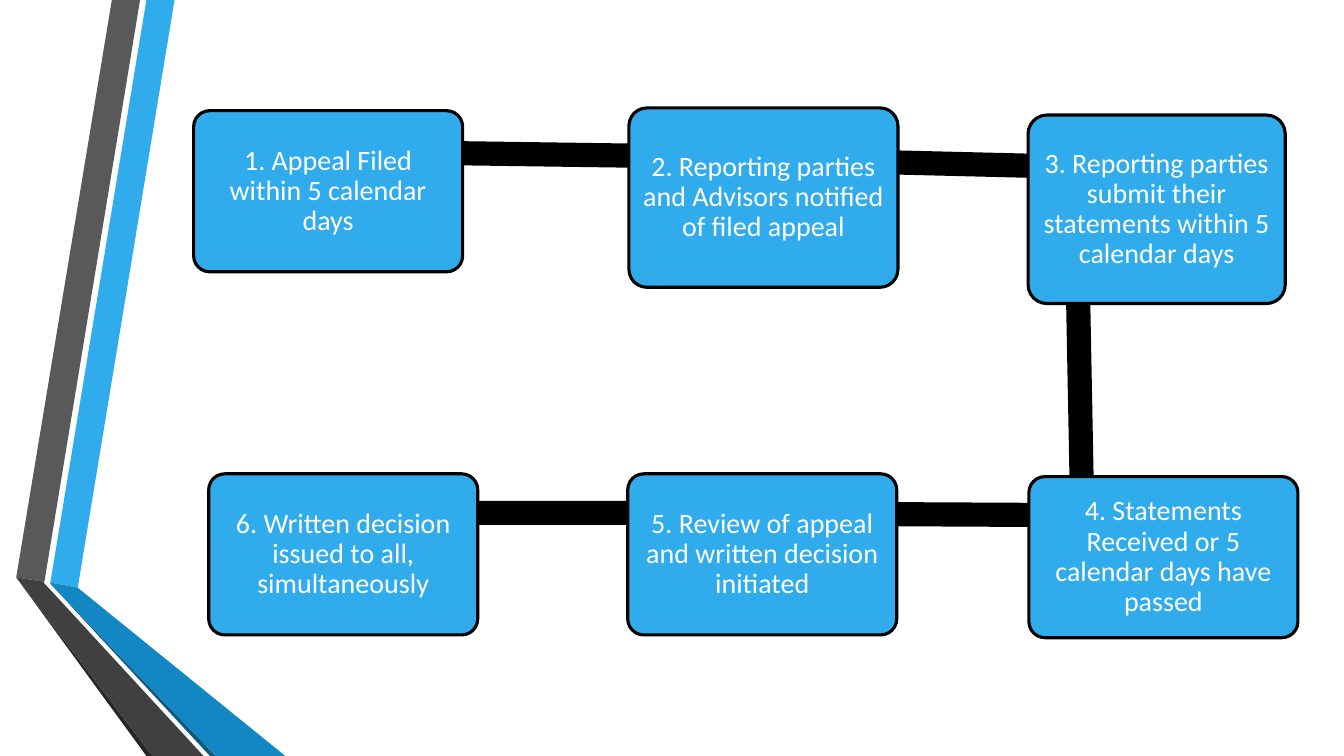
from pptx import Presentation
from pptx.dml.color import RGBColor
from pptx.enum.shapes import MSO_SHAPE
from pptx.enum.text import MSO_ANCHOR, PP_ALIGN
from pptx.util import Cm, Pt

BLACK = RGBColor(0x00, 0x00, 0x00)
WHITE = RGBColor(0xFF, 0xFF, 0xFF)
BLUE = RGBColor(0x30, 0xAC, 0xEC)
DEEP_BLUE = RGBColor(0x12, 0x87, 0xC3)
DARK_BLUE = RGBColor(0x0C, 0x5A, 0x82)
GREY = RGBColor(0x59, 0x59, 0x59)
DARK_GREY = RGBColor(0x40, 0x40, 0x40)
CHARCOAL = RGBColor(0x26, 0x26, 0x26)

RIBBON_FACES = [
    (BLUE, [(0.86, 14.68), (1.55, 14.81), (3.99, 0), (3.28, 0)]),
    (GREY, [(3.12, 0), (2.41, 0), (0, 14.55), (0.71, 14.66)]),
    (CHARCOAL, [(0, 14.55), (3.28, 19.05), (3.43, 19.05)]),
    (DARK_BLUE, [(0.86, 14.71), (4.88, 19.05), (5.03, 19.05)]),
    (DEEP_BLUE, [(0.86, 14.71), (5.03, 19.05), (6.78, 19.05),
                 (1.55, 14.81), (0.86, 14.68)]),
    (DARK_GREY, [(4.72, 19.05), (0.81, 14.81), (0.69, 14.68), (0.71, 14.66),
                 (0, 14.55), (3.43, 19.05)]),
]

BAR_HEIGHT = 0.61
BARS = [
    (1.37, 0.84, 10.97, 0.8),
    (12.32, 1.06, 9.91, 1.4),
    (17.93, 5.59, 8.76, 88.9),
    (12.32, 9.93, 10.11, 0.3),
    (1.75, 9.9, 10.57, 0),
]

STEP_WIDTH, STEP_HEIGHT = 6.78, 4.06
STEPS = [
    (0, 0.07, STEP_WIDTH, STEP_HEIGHT, "1. Appeal Filed within 5 calendar days"),
    (10.97, 0, STEP_WIDTH, 4.52,
     "2. Reporting parties and Advisors notified of filed appeal"),
    (21.03, 0.18, 6.48, 4.75,
     "3. Reporting parties submit their statements within 5 calendar days"),
    (21.05, 9.29, STEP_WIDTH, STEP_HEIGHT,
     "4. Statements Received or 5 calendar days have passed"),
    (10.94, 9.22, STEP_WIDTH, STEP_HEIGHT,
     "5. Review of appeal and written decision initiated"),
    (0.38, 9.22, STEP_WIDTH, STEP_HEIGHT,
     "6. Written decision issued to all, simultaneously"),
]


def paint(shape, color):
    shape.shadow.inherit = False
    shape.fill.solid()
    shape.fill.fore_color.rgb = color
    shape.line.fill.background()


def add_ribbons(slide, left, top):
    for color, corners in RIBBON_FACES:
        points = [(Cm(x), Cm(y)) for x, y in corners]
        builder = slide.shapes.build_freeform(*points[0])
        builder.add_line_segments(points[1:], close=True)
        paint(builder.convert_to_shape(Cm(left), Cm(top)), color)


def add_bar(slide, left, top, width, angle):
    bar = slide.shapes.add_shape(
        MSO_SHAPE.RECTANGLE, Cm(left), Cm(top), Cm(width), Cm(BAR_HEIGHT))
    bar.rotation = angle
    paint(bar, BLACK)


def add_step(slide, left, top, width, height, text):
    step = slide.shapes.add_shape(
        MSO_SHAPE.ROUNDED_RECTANGLE, Cm(left), Cm(top), Cm(width), Cm(height))
    step.adjustments[0] = 0.1
    paint(step, BLUE)
    step.line.color.rgb = BLACK
    step.line.width = Pt(2.25)
    frame = step.text_frame
    frame.word_wrap = True
    frame.vertical_anchor = MSO_ANCHOR.MIDDLE
    frame.margin_left = frame.margin_right = Cm(0.2)
    frame.margin_top = frame.margin_bottom = Cm(0.2)
    frame.text = text
    paragraph = frame.paragraphs[0]
    paragraph.alignment = PP_ALIGN.CENTER
    paragraph.line_spacing = 0.9
    font = paragraph.runs[0].font
    font.name = "Calibri"
    font.size = Pt(20)
    font.color.rgb = WHITE


def add_appeal_flow(slide, left, top):
    for x, y, width, angle in BARS:
        add_bar(slide, left + x, top + y, width, angle)
    for x, y, width, height, text in STEPS:
        add_step(slide, left + x, top + y, width, height, text)


def main():
    presentation = Presentation()
    presentation.slide_width = Cm(33.87)
    presentation.slide_height = Cm(19.05)
    slide = presentation.slides.add_slide(presentation.slide_layouts[6])
    add_ribbons(slide, 0.41, 0)
    add_appeal_flow(slide, 4.88, 2.72)
    presentation.save("out.pptx")


if __name__ == "__main__":
    main()
